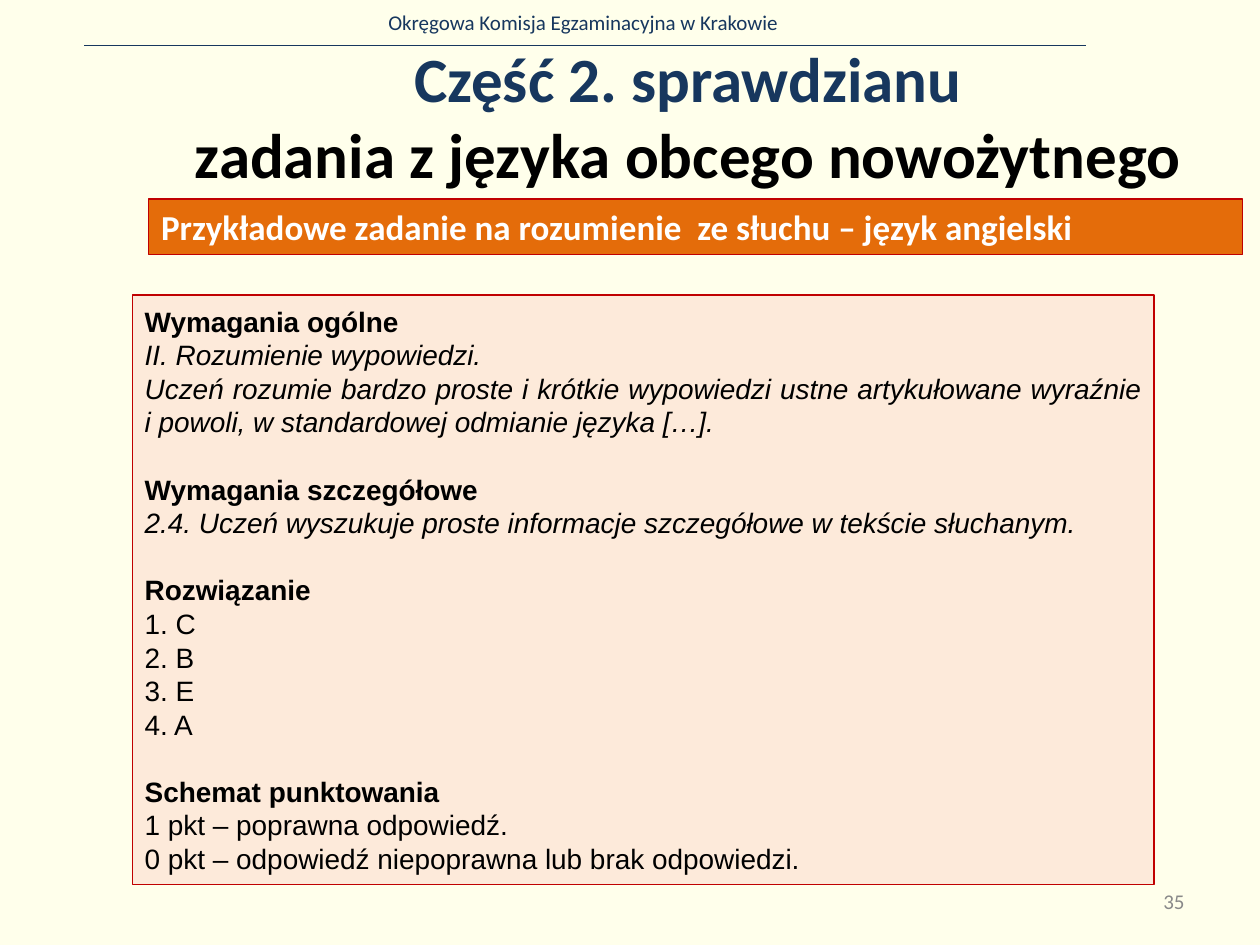
from dataclasses import dataclass

import lxml.etree
import pptx
import pptx.dml.color
import pptx.enum.shapes
import pptx.enum.text
import pptx.oxml.ns
import pptx.util

Inches = pptx.util.Inches
Pt = pptx.util.Pt
ALIGN = pptx.enum.text.PP_ALIGN
ANCHOR = pptx.enum.text.MSO_ANCHOR


@dataclass(frozen=True)
class Theme:
    # Colours
    background: str = "FFFFEB"
    navy: str = "17375E"
    black: str = "000000"
    white: str = "FFFFFF"
    grey: str = "898989"
    orange: str = "E46C0A"
    peach: str = "FDEADA"
    red: str = "C00000"
    # Fonts and sizes
    heading_font: str = "Calibri"
    body_font: str = "Arial"
    title_size: float = 36
    banner_size: float = 20
    body_size: float = 16
    body_leading: float = 19.2
    small_size: float = 12


class ExamSlide:
    def __init__(self, deck, theme):
        self.theme = theme
        self.slide = deck.slides.add_slide(deck.slide_layouts[5])
        self.slide.background.fill.solid()
        self.slide.background.fill.fore_color.rgb = self.rgb(theme.background)

    @staticmethod
    def rgb(colour):
        return pptx.dml.color.RGBColor.from_string(colour)

    def style(self, font, size, colour, name=None, bold=False, italic=False):
        font.name = name or self.theme.heading_font
        font.size = Pt(size)
        font.bold = bold
        font.italic = italic
        font.color.rgb = self.rgb(colour)

    def title(self, box, lines):
        heading = self.slide.shapes.title
        heading.left, heading.top, heading.width, heading.height = map(Inches, box)
        heading.text_frame.vertical_anchor = ANCHOR.MIDDLE
        paragraph = heading.text_frame.paragraphs[0]
        paragraph.alignment = ALIGN.CENTER
        for index, (text, colour) in enumerate(lines):
            if index:
                paragraph.add_line_break()
            run = paragraph.add_run()
            run.text = text
            self.style(run.font, self.theme.title_size, colour, bold=True)

    def label(self, box, text, colour, alignment, anchor=ANCHOR.TOP):
        frame = self.slide.shapes.add_textbox(*map(Inches, box)).text_frame
        frame.word_wrap = True
        frame.vertical_anchor = anchor
        paragraph = frame.paragraphs[0]
        paragraph.text = text
        paragraph.alignment = alignment
        self.style(paragraph.font, self.theme.small_size, colour)

    def rule(self, start, end):
        line = self.slide.shapes.add_connector(
            pptx.enum.shapes.MSO_CONNECTOR.STRAIGHT, *map(Inches, start + end))
        line.line.color.rgb = self.rgb(self.theme.navy)
        line.line.width = Pt(0.5)
        properties = line._element.spPr
        lxml.etree.SubElement(properties, pptx.oxml.ns.qn("a:effectLst"))

    def panel(self, box, fill, anchor):
        panel = self.slide.shapes.add_shape(
            pptx.enum.shapes.MSO_SHAPE.RECTANGLE, *map(Inches, box))
        panel.shadow.inherit = False
        panel.fill.solid()
        panel.fill.fore_color.rgb = self.rgb(fill)
        panel.line.color.rgb = self.rgb(self.theme.red)
        panel.line.width = Pt(0.75)
        panel.text_frame.word_wrap = True
        panel.text_frame.vertical_anchor = anchor
        return panel.text_frame

    def banner(self, box, text):
        paragraph = self.panel(box, self.theme.orange, ANCHOR.TOP).paragraphs[0]
        paragraph.text = text
        paragraph.alignment = ALIGN.LEFT
        self.style(paragraph.font, self.theme.banner_size, self.theme.white, bold=True)

    def sections(self, box, sections):
        theme = self.theme
        frame = self.panel(box, theme.peach, ANCHOR.MIDDLE)
        paragraph = frame.paragraphs[0]
        for number, (heading, lines, italic) in enumerate(sections):
            for row, text in enumerate([heading, *lines]):
                if number or row:
                    paragraph = frame.add_paragraph()
                paragraph.text = text
                paragraph.alignment = ALIGN.JUSTIFY
                paragraph.line_spacing = Pt(theme.body_leading)
                # One line of air above each later section
                if number and row == 0:
                    paragraph.space_before = Pt(theme.body_leading)
                self.style(paragraph.font, theme.body_size, theme.black,
                           theme.body_font, bold=row == 0, italic=italic and row > 0)


SECTIONS = [
    ("Wymagania ogólne", [
        "II. Rozumienie wypowiedzi.",
        "Uczeń rozumie bardzo proste i krótkie wypowiedzi ustne artykułowane "
        "wyraźnie i powoli, w standardowej odmianie języka […].",
    ], True),
    ("Wymagania szczegółowe", [
        "2.4. Uczeń wyszukuje proste informacje szczegółowe w tekście słuchanym.",
    ], True),
    ("Rozwiązanie", ["1. C", "2. B", "3. E", "4. A"], False),
    ("Schemat punktowania", [
        "1 pkt – poprawna odpowiedź.",
        "0 pkt – odpowiedź niepoprawna lub brak odpowiedzi.",
    ], False),
]


def main():
    deck = pptx.Presentation()
    deck.slide_width, deck.slide_height = Inches(10), Inches(7.5)
    theme = Theme()
    exam = ExamSlide(deck, theme)

    # Running header
    exam.label((0.26, 0.03, 8.74, 0.3), "Okręgowa Komisja Egzaminacyjna w Krakowie",
               theme.navy, ALIGN.CENTER)
    exam.rule((0.67, 0.36), (8.62, 0.36))

    # Title and task banner
    exam.title((1.36, 0.29, 8.2, 1.25), [
        ("Część 2. sprawdzianu", theme.navy),
        ("zadania z języka obcego nowożytnego", theme.black),
    ])
    exam.banner((1.18, 1.58, 8.68, 0.44),
                "Przykładowe zadanie na rozumienie  ze słuchu – język angielski")

    # Requirements, answers and scoring
    exam.sections((1.05, 2.34, 8.11, 4.68), SECTIONS)

    # Page number
    exam.label((7.17, 6.95, 2.33, 0.4), "35", theme.grey, ALIGN.RIGHT, ANCHOR.MIDDLE)

    deck.save("out.pptx")


if __name__ == "__main__":
    main()
